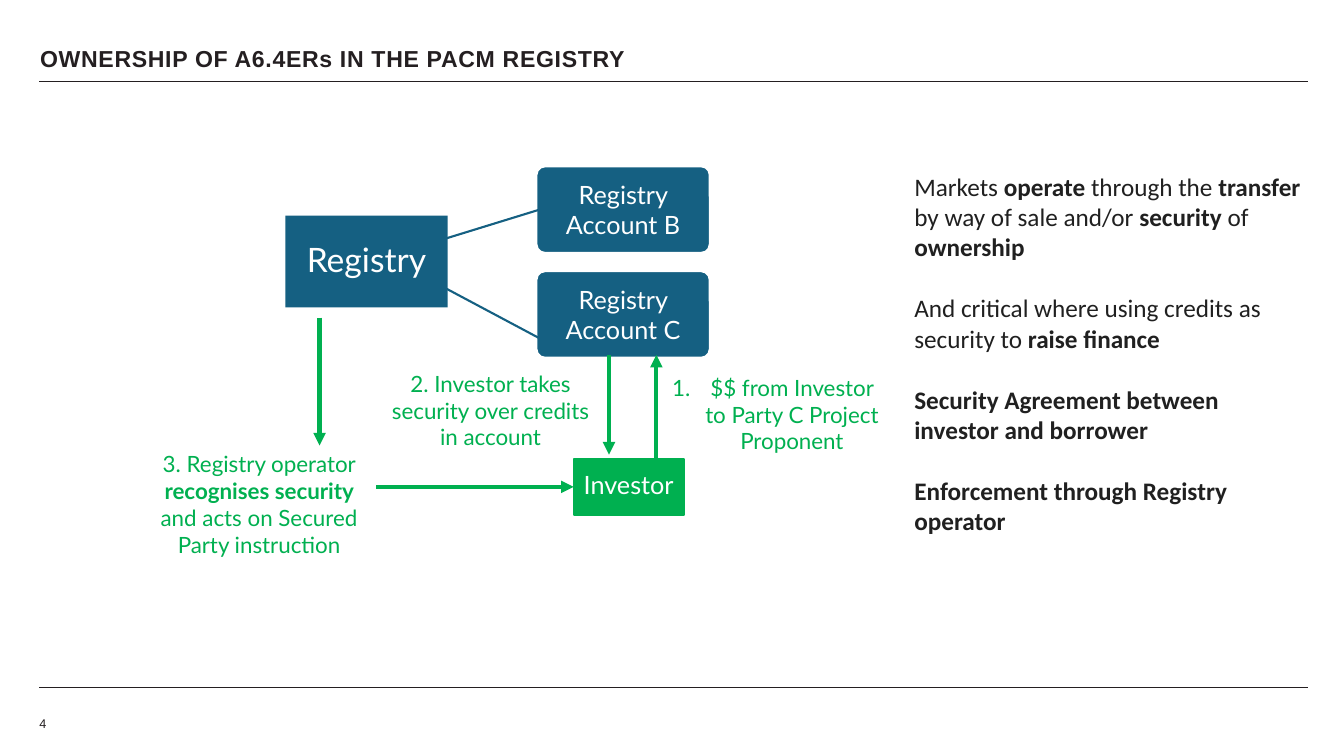
from lxml import etree
from pptx import Presentation
from pptx.dml.color import RGBColor
from pptx.enum import shapes, text
from pptx.oxml.ns import qn
from pptx.util import Inches, Pt

INK = RGBColor(0x24, 0x1F, 0x21)
BODY = RGBColor(0x20, 0x20, 0x20)
BLUE = RGBColor(0x15, 0x60, 0x82)
GREEN = RGBColor(0x00, 0xB0, 0x50)
WHITE = RGBColor(0xFF, 0xFF, 0xFF)
CENTER = text.PP_ALIGN.CENTER
RECTANGLE = shapes.MSO_SHAPE.RECTANGLE
ROUNDED = shapes.MSO_SHAPE.ROUNDED_RECTANGLE


def style_spans(paragraph, marked, font, size, color):
    """Write text into a paragraph, bold between asterisks."""
    for index, part in enumerate(marked.split("*")):
        if part:
            span = paragraph.add_run()
            span.text = part
            span.font.name = font
            span.font.size = Pt(size)
            span.font.color.rgb = color
            span.font.bold = index % 2 == 1


def set_insets(frame, inset):
    """Give a text frame the same inset on all sides."""
    frame.margin_left = frame.margin_right = Inches(inset)
    frame.margin_top = frame.margin_bottom = Inches(inset)


def add_text(page, place, paragraphs, font, size, color, align=None, gap=0):
    """Add a wrapped text box with evenly spaced paragraphs."""
    box = page.shapes.add_textbox(*map(Inches, place))
    frame = box.text_frame
    frame.word_wrap = True
    for index, marked in enumerate(paragraphs):
        paragraph = frame.add_paragraph() if index else frame.paragraphs[0]
        paragraph.alignment = align
        if index and gap:
            paragraph.space_before = Pt(gap)
        style_spans(paragraph, marked, font, size, color)
    return box


def add_node(page, kind, place, label, size, fill, outline=None, spacing=None):
    """Add a filled diagram node with a centred label."""
    node = page.shapes.add_shape(kind, *map(Inches, place))
    node.shadow.inherit = False
    node.fill.solid()
    node.fill.fore_color.rgb = fill
    if outline is None:
        node.line.fill.background()
    else:
        node.line.color.rgb = outline
        node.line.width = Pt(1.5)
    if kind == ROUNDED:
        node.adjustments[0] = 0.1
    frame = node.text_frame
    frame.word_wrap = True
    frame.vertical_anchor = text.MSO_ANCHOR.MIDDLE
    set_insets(frame, 0.01)
    paragraph = frame.paragraphs[0]
    paragraph.alignment = CENTER
    paragraph.line_spacing = spacing
    style_spans(paragraph, label, "Lato", size, WHITE)


def add_line(page, ends, color, width, arrow=False):
    """Add a straight line, with an arrowhead at its end if asked."""
    line = page.shapes.add_connector(shapes.MSO_CONNECTOR.STRAIGHT, *map(Inches, ends))
    line.line.color.rgb = color
    line.line.width = Pt(width)
    if arrow:
        outline = line.line._get_or_add_ln()
        etree.SubElement(outline, qn("a:tailEnd"), type="triangle")
    etree.SubElement(line._element.spPr, qn("a:effectLst"))


def number_paragraph(paragraph):
    """Number a paragraph with a hanging indent."""
    properties = paragraph._p.get_or_add_pPr()
    properties.set("marL", str(Inches(0.38)))
    properties.set("indent", str(Inches(-0.38)))
    etree.SubElement(properties, qn("a:buFont"), typeface="+mj-lt")
    etree.SubElement(properties, qn("a:buAutoNum"), type="arabicPeriod")


def add_frame(page):
    """Add the title, the two rules and the page number."""
    for top in (0.81, 6.82):
        add_line(page, (0.39, top, 12.97, top), INK, 1)
    number = add_text(page, (0.39, 7.08, 0.39, 0.2), ["4"], "Arial", 9, INK)
    number.text_frame.vertical_anchor = text.MSO_ANCHOR.MIDDLE
    set_insets(number.text_frame, 0)
    title = add_text(page, (0.3, 0.47, 11.5, 0.3),
                     ["*OWNERSHIP OF A6.4ERs IN THE PACM REGISTRY*"], "Arial", 16.5, INK)
    heading = title.text_frame.paragraphs[0]
    heading.line_spacing = 0.7
    heading.runs[0].font._element.set("spc", "50")


def add_diagram(page):
    """Add the registry, its accounts, the investor and the flows."""
    for index, letter in enumerate("BC"):
        add_node(page, ROUNDED, (5.32, 1.65 + 1.04 * index, 1.72, 0.86),
                 f"Registry Account {letter}", 18, BLUE, WHITE)
    for ends in ((4.41, 2.37, 5.35, 2.08), (4.42, 2.86, 5.34, 3.35)):
        add_line(page, ends, BLUE, 1.5)
    steps = (
        ((6.5, 3.66, 2.33, 0.91), "$$ from Investor to Party C Project Proponent"),
        ((3.77, 3.62, 2.19, 0.91), "2. Investor takes security over credits in account"),
        ((1.4, 4.42, 2.34, 1.18),
         "3. Registry operator *recognises security *and acts on Secured Party instruction"),
    )
    boxes = [add_text(page, place, [step], "Lato", 16, GREEN, CENTER) for place, step in steps]
    number_paragraph(boxes[0].text_frame.paragraphs[0])
    add_node(page, RECTANGLE, (5.69, 4.55, 1.09, 0.56), "Investor", 18, GREEN, GREEN, 0.9)
    add_node(page, RECTANGLE, (2.83, 2.14, 1.61, 0.91), "Registry", 24, BLUE, spacing=0.9)
    for ends in ((6.51, 4.54, 6.51, 3.52), (6.04, 3.52, 6.04, 4.51),
                 (3.17, 3.15, 3.17, 4.42), (3.73, 4.83, 5.69, 4.83)):
        add_line(page, ends, GREEN, 3, arrow=True)


def main():
    """Build and save the slide."""
    deck = Presentation()
    deck.slide_width, deck.slide_height = Inches(13.33), Inches(7.5)
    page = deck.slides.add_slide(deck.slide_layouts[6])
    add_frame(page)
    add_text(page, (8.97, 1.65, 4.09, 3.74), [
        "Markets *operate *through the *transfer *by way of sale and/or *security* of *ownership*",
        "And critical where using credits as security to *raise finance*",
        "*Security Agreement between investor and borrower*",
        "*Enforcement through Registry operator*",
    ], "Calibri", 18, BODY, gap=22)
    add_diagram(page)
    deck.save("out.pptx")


if __name__ == "__main__":
    main()
